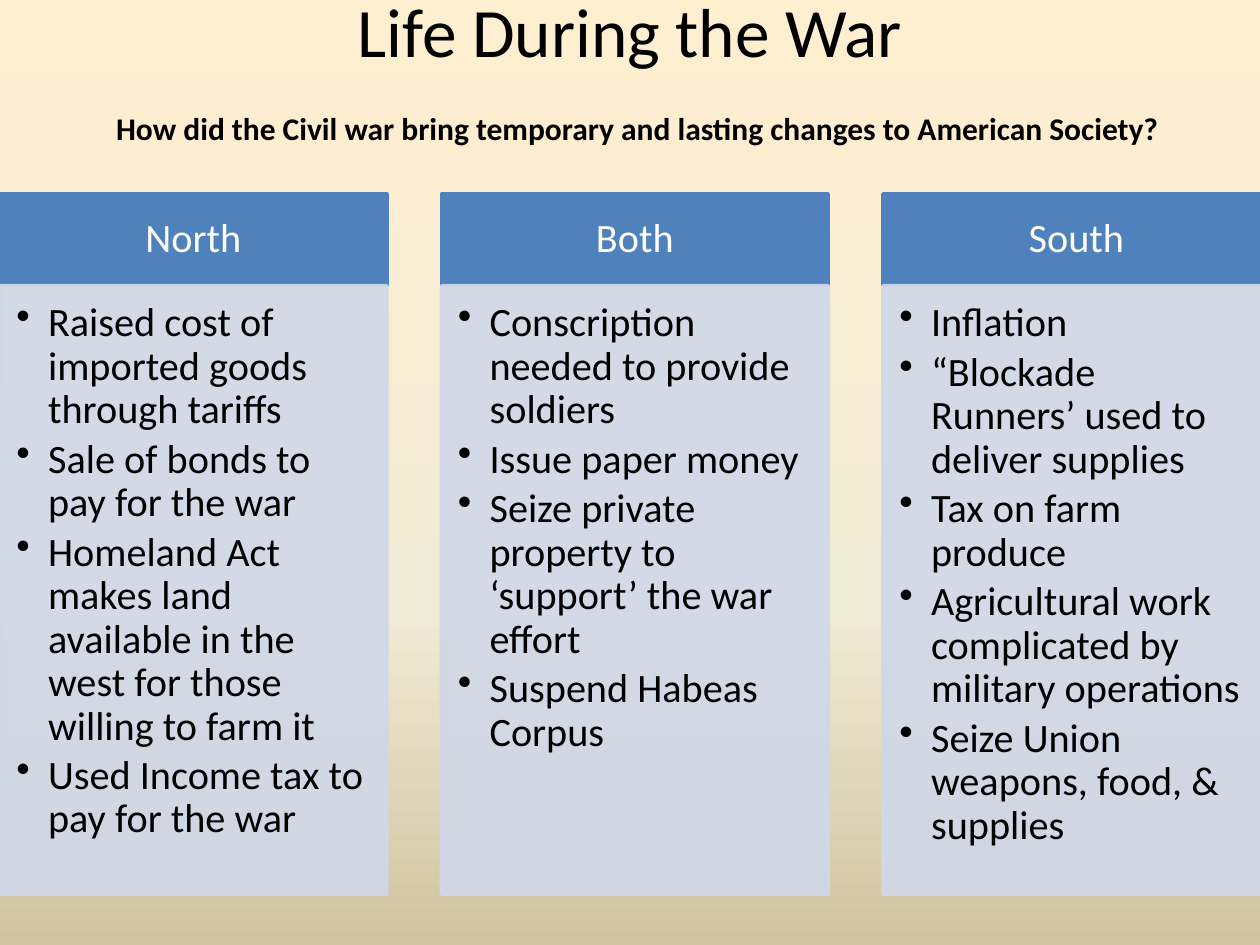
"""Build the "Life During the War" comparison slide."""
from copy import deepcopy
from dataclasses import dataclass

from lxml.etree import SubElement
from pptx import Presentation
from pptx.dml.color import RGBColor
from pptx.enum.shapes import MSO_SHAPE
from pptx.enum.text import MSO_ANCHOR, MSO_AUTO_SIZE, PP_ALIGN
from pptx.oxml.ns import qn
from pptx.shapes.autoshape import Shape
from pptx.slide import Slide
from pptx.text.text import _Paragraph
from pptx.util import Cm, Pt


@dataclass(frozen=True)
class Theme:
    """Colours, font and type sizes."""
    font: str = "Calibri"
    ink: str = "000000"
    head_ink: str = "FFFFFF"
    head: str = "4F81BD"
    body: str = "D0D8E8"
    body_alpha: int = 90
    backdrop: tuple = ((0, "FFEFD1"), (0.65, "F0EBD5"), (1, "D1C39F"))
    title_pt: float = 39.6
    question_pt: float = 18
    column_pt: float = 23


@dataclass(frozen=True)
class Column:
    """A heading and its bullet points."""
    heading: str
    points: tuple[str, ...]


@dataclass(frozen=True)
class Panel:
    """Vertical place, insets and colours shared by a row of boxes."""
    top: float
    height: float
    insets: tuple[float, float, float, float]
    fill: str
    alpha: int
    anchor: MSO_ANCHOR


THEME = Theme()
WIDTH, PITCH = 7.8, 8.9
HEAD = Panel(3.91, 1.84, (0.45, 0.25, 0.45, 0.25), THEME.head, 100, MSO_ANCHOR.MIDDLE)
BODY = Panel(5.76, 12.27, (0.33, 0.33, 0.45, 0.5), THEME.body, THEME.body_alpha, MSO_ANCHOR.TOP)
COLUMNS = (
    Column("North", (
        "Raised cost of imported goods through tariffs",
        "Sale of bonds to pay for the war",
        "Homeland Act makes land available in the west for those willing to farm it",
        "Used Income tax to pay for the war",
    )),
    Column("Both", (
        "Conscription needed to provide soldiers",
        "Issue paper money",
        "Seize private property to ‘support’ the war effort",
        "Suspend Habeas Corpus",
    )),
    Column("South", (
        "Inflation",
        "“Blockade Runners’ used to deliver supplies",
        "Tax on farm produce",
        "Agricultural work complicated by military operations",
        "Seize Union weapons, food, & supplies",
    )),
)


def style(p: _Paragraph, size: float, color: str) -> None:
    """Set the font of a whole paragraph."""
    p.font.name, p.font.size = THEME.font, Pt(size)
    p.font.color.rgb = RGBColor.from_string(color)


def add_backdrop(s: Slide) -> None:
    """Fill the background with the vertical gradient."""
    fill = s.background.fill
    fill.gradient()
    fill.gradient_angle = 270
    gs_lst = s.element.xpath(".//p:bg//a:gsLst")[0]
    gs_lst.append(deepcopy(gs_lst[-1]))
    for stop, (position, color) in zip(fill.gradient_stops, THEME.backdrop):
        stop.position = position
        stop.color.rgb = RGBColor.from_string(color)


def add_title(s: Slide, title: str, question: str) -> None:
    """Write the title with the question below it."""
    sp = s.shapes.title
    sp.left, sp.top, sp.width, sp.height = Cm(1.27), Cm(0.76), Cm(22.86), Cm(1.35)
    tf = sp.text_frame
    tf.auto_size, tf.vertical_anchor = MSO_AUTO_SIZE.NONE, MSO_ANCHOR.MIDDLE
    p = tf.paragraphs[0]
    p.alignment = PP_ALIGN.CENTER
    style(p, THEME.title_pt, THEME.ink)
    p.add_run().text = title
    p.add_line_break()
    p.add_run().text = " "
    r = p.add_run()
    r.text = question
    r.font.size, r.font.bold = Pt(THEME.question_pt), True


def add_panel(s: Slide, left: float, panel: Panel) -> Shape:
    """Draw one empty box of a column."""
    sp = s.shapes.add_shape(MSO_SHAPE.RECTANGLE, Cm(left), Cm(panel.top), Cm(WIDTH), Cm(panel.height))
    sp.shadow.inherit = False
    sp.line.width = Pt(2)
    for fill in (sp.fill, sp.line.fill):
        fill.solid()
        fill.fore_color.rgb = RGBColor.from_string(panel.fill)
    if panel.alpha < 100:
        for clr in sp.element.spPr.iter(qn("a:srgbClr")):
            SubElement(clr, qn("a:alpha"), val=str(panel.alpha * 1000))
    tf = sp.text_frame
    tf.word_wrap, tf.vertical_anchor = True, panel.anchor
    tf.margin_left, tf.margin_top, tf.margin_right, tf.margin_bottom = map(Cm, panel.insets)
    return sp


def add_bullet(p: _Paragraph, text: str) -> None:
    """Write one bullet point with a hanging indent."""
    p.text = text
    p.alignment, p.line_spacing, p.space_after = PP_ALIGN.LEFT, 0.9, Pt(3.45)
    style(p, THEME.column_pt, THEME.ink)
    pPr = p._p.get_or_add_pPr()
    indent = Cm(0.64)
    pPr.set("marL", str(indent))
    pPr.set("indent", str(-indent))
    bullet = pPr.makeelement(qn("a:buChar"), {"char": "•"})
    pPr.find(qn("a:defRPr")).addprevious(bullet)


def add_column(s: Slide, left: float, column: Column) -> None:
    """Draw a heading box and the list below it."""
    p = add_panel(s, left, HEAD).text_frame.paragraphs[0]
    p.text = column.heading
    p.alignment, p.line_spacing = PP_ALIGN.CENTER, 0.9
    style(p, THEME.column_pt, THEME.head_ink)
    tf = add_panel(s, left, BODY).text_frame
    for i, point in enumerate(column.points):
        add_bullet(tf.add_paragraph() if i else tf.paragraphs[0], point)


def main() -> None:
    """Build and save the slide."""
    prs = Presentation()
    prs.slide_width, prs.slide_height = Cm(25.4), Cm(19.05)
    s = prs.slides.add_slide(prs.slide_layouts[5])
    add_backdrop(s)
    add_title(s, "Life During the War",
              "How did the Civil war bring temporary and lasting changes to American Society?")
    for i, column in enumerate(COLUMNS):
        add_column(s, i * PITCH, column)
    prs.save("out.pptx")


if __name__ == "__main__":
    main()
